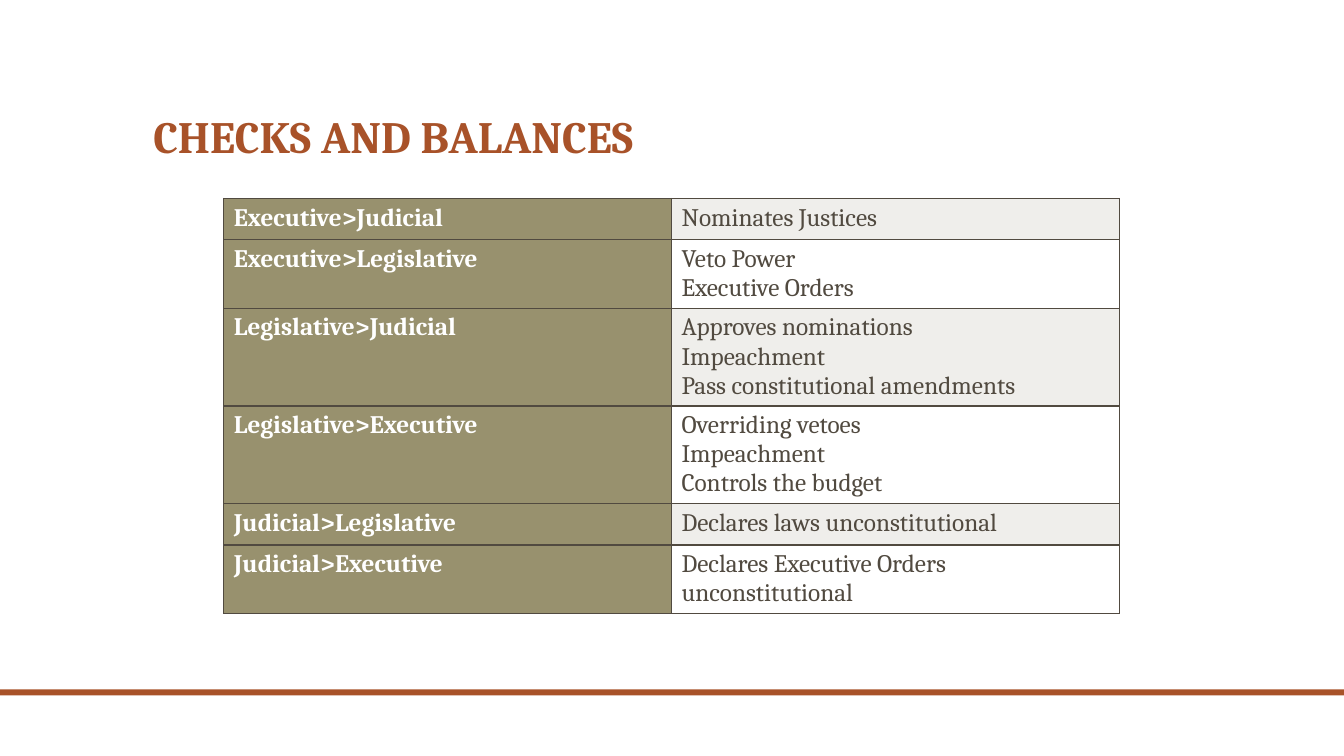
import pptx
import pptx.util
import pptx.dml.color
import pptx.enum.shapes
import pptx.enum.text
import pptx.oxml
import pptx.oxml.ns

Inches = pptx.util.Inches
Pt = pptx.util.Pt
RGBColor = pptx.dml.color.RGBColor

RUST = RGBColor(0xA8, 0x52, 0x29)
OLIVE = RGBColor(0x98, 0x91, 0x6E)
PALE = RGBColor(0xEF, 0xEE, 0xEB)
WHITE = RGBColor(0xFF, 0xFF, 0xFF)
BROWN = RGBColor(0x51, 0x4A, 0x40)
FONT = "Cambria"

CHECKS = [
    ("Executive>Judicial", ["Nominates Justices"]),
    ("Executive>Legislative", ["Veto Power", "Executive Orders"]),
    ("Legislative>Judicial",
     ["Approves nominations", "Impeachment", "Pass constitutional amendments"]),
    ("Legislative>Executive",
     ["Overriding vetoes", "Impeachment", "Controls the budget"]),
    ("Judicial>Legislative", ["Declares laws unconstitutional"]),
    ("Judicial>Executive", ["Declares Executive Orders unconstitutional"]),
]


def add_run(p, text, size, color, bold):
    r = p.add_run()
    r.text = text
    r.font.name = FONT
    r.font.size = Pt(size)
    r.font.bold = bold
    r.font.color.rgb = color


def fill_cell(cell, lines, fill, color, bold):
    """Border and fill the cell, then write one paragraph per line."""
    tcPr = cell._tc.get_or_add_tcPr()
    for side in ("lnL", "lnR", "lnT", "lnB"):
        tcPr.append(pptx.oxml.parse_xml(
            f'<a:{side} {pptx.oxml.ns.nsdecls("a")} w="{Pt(1)}"><a:solidFill>'
            f'<a:srgbClr val="{BROWN}"/></a:solidFill></a:{side}>'))
    cell.fill.solid()
    cell.fill.fore_color.rgb = fill
    tf = cell.text_frame
    for i, line in enumerate(lines):
        p = tf.add_paragraph() if i else tf.paragraphs[0]
        add_run(p, line, 18, color, bold)


prs = pptx.Presentation()
prs.slide_width = Inches(13.33)
prs.slide_height = Inches(7.5)
s = prs.slides.add_slide(prs.slide_layouts[5])

rule = s.shapes.add_shape(pptx.enum.shapes.MSO_SHAPE.RECTANGLE,
                          0, Inches(6.84), prs.slide_width, Inches(0.06))
rule.shadow.inherit = False
rule.fill.solid()
rule.fill.fore_color.rgb = RUST
rule.line.fill.background()

title = s.shapes.title
title.left, title.top = Inches(1.42), Inches(0.42)
title.width, title.height = Inches(10.5), Inches(1.25)
tf = title.text_frame
tf.word_wrap = True
tf.auto_size = pptx.enum.text.MSO_AUTO_SIZE.NONE
tf.vertical_anchor = pptx.enum.text.MSO_ANCHOR.BOTTOM
p = tf.paragraphs[0]
p.alignment = pptx.enum.text.PP_ALIGN.LEFT
p.line_spacing = 0.9
add_run(p, "CHECKS AND BALANCES", 32, RUST, True)

ROW_HEIGHTS = {1: 0.41, 2: 0.67, 3: 0.97}
table_height = sum(ROW_HEIGHTS[len(powers)] for _, powers in CHECKS)
table = s.shapes.add_table(len(CHECKS), 2, Inches(2.22), Inches(1.97),
                           Inches(8.88), Inches(table_height)).table
for i, (branches, powers) in enumerate(CHECKS):
    table.rows[i].height = Inches(ROW_HEIGHTS[len(powers)])
    fill_cell(table.cell(i, 0), [branches], OLIVE, WHITE, True)
    fill_cell(table.cell(i, 1), powers, WHITE if i % 2 else PALE, BROWN, False)

prs.save("out.pptx")
